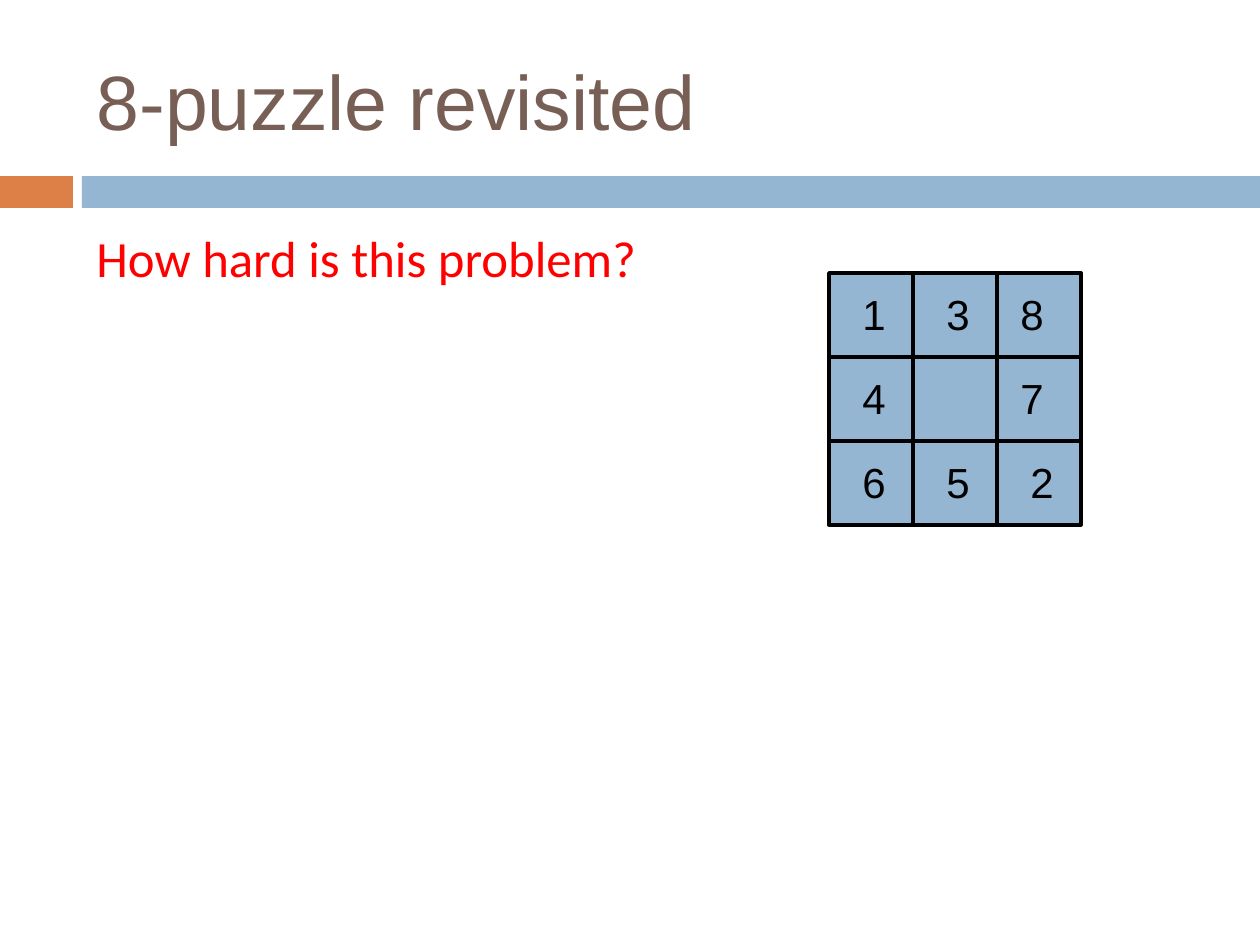
from typing import NamedTuple

from pptx import Presentation
from pptx.dml.color import RGBColor
from pptx.enum.shapes import MSO_SHAPE
from pptx.enum.text import MSO_ANCHOR, MSO_AUTO_SIZE, PP_ALIGN
from pptx.util import Emu, Pt

SCALE = 914400 / 126
BLUE, ORANGE, BROWN = "94B6D2", "DD8047", "775F55"
BLACK, RED = "000000", "FF0000"
LEFT, TOP, SIDE = 829, 273, 84
INDENT, DROP = 21, 9


class Box(NamedTuple):
    left: int
    top: int
    width: int
    height: int


class Tile(NamedTuple):
    row: int
    col: int
    digit: str = ""
    indent: int = INDENT


BARS = [(Box(0, 176, 73, 32), ORANGE), (Box(82, 176, 1178, 32), BLUE)]
TILES = [
    Tile(0, 0, "1"), Tile(0, 1, "3"), Tile(0, 2, "8", 11),
    Tile(1, 0, "4"), Tile(1, 1), Tile(1, 2, "7", 11),
    Tile(2, 0, "6"), Tile(2, 1, "5"), Tile(2, 2, "2"),
]


def px(count: int) -> Emu:
    """Turn pixels into EMU."""
    return Emu(round(count * SCALE))


def color(code: str) -> RGBColor:
    """Turn a hex string into a colour."""
    return RGBColor.from_string(code)


def place(shape, box: Box) -> None:
    """Move and size a shape."""
    shape.left, shape.top, shape.width, shape.height = map(px, box)


def rect(shapes, box: Box, fill: str, line: str = "") -> None:
    """Draw a flat rectangle with an optional outline."""
    shape = shapes.add_shape(MSO_SHAPE.RECTANGLE, *map(px, box))
    shape.shadow.inherit = False
    shape.fill.solid()
    shape.fill.fore_color.rgb = color(fill)
    if line:
        shape.line.color.rgb = color(line)
        shape.line.width = Pt(2)
    else:
        shape.line.fill.background()


def write(shape, text: str, *, size: int, ink: str = BLACK, font: str = "Arial",
          anchor=MSO_ANCHOR.TOP, fit=MSO_AUTO_SIZE.NONE, before: int = 0) -> None:
    """Put formatted text into a shape."""
    frame = shape.text_frame
    frame.word_wrap = True
    frame.auto_size = fit
    frame.vertical_anchor = anchor
    para = frame.paragraphs[0]
    para.alignment = PP_ALIGN.LEFT
    para.space_before = Pt(before)
    run = para.add_run()
    run.text = text
    run.font.size = Pt(size)
    run.font.name = font
    run.font.color.rgb = color(ink)


def board(shapes) -> None:
    """Draw the puzzle grid and its digits."""
    grid = shapes.add_group_shape().shapes
    for tile in TILES:
        left, top = LEFT + tile.col * SIDE, TOP + tile.row * SIDE
        rect(grid, Box(left, top, SIDE, SIDE), BLUE, BLACK)
    for tile in TILES:
        if tile.digit:
            left, top = LEFT + tile.col * SIDE, TOP + tile.row * SIDE
            box = Box(left + tile.indent, top + DROP, 53, 64)
            label = shapes.add_textbox(*map(px, box))
            write(label, tile.digit, size=24, fit=MSO_AUTO_SIZE.SHAPE_TO_FIT_TEXT)


def main() -> None:
    """Build and save the slide."""
    deck = Presentation()
    deck.slide_width, deck.slide_height = px(1260), px(945)
    shapes = deck.slides.add_slide(deck.slide_layouts[5]).shapes
    for box, fill in BARS:
        rect(shapes, box, fill)
    place(shapes.title, Box(84, 32, 1124, 136))
    write(shapes.title, "8-puzzle revisited", size=44, ink=BROWN,
          anchor=MSO_ANCHOR.MIDDLE)
    board(shapes)
    body = shapes.add_textbox(*map(px, Box(84, 221, 1124, 116)))
    write(body, "How hard is this problem?", size=29, ink=RED, font="Calibri",
          before=7)
    deck.save("out.pptx")


if __name__ == "__main__":
    main()
